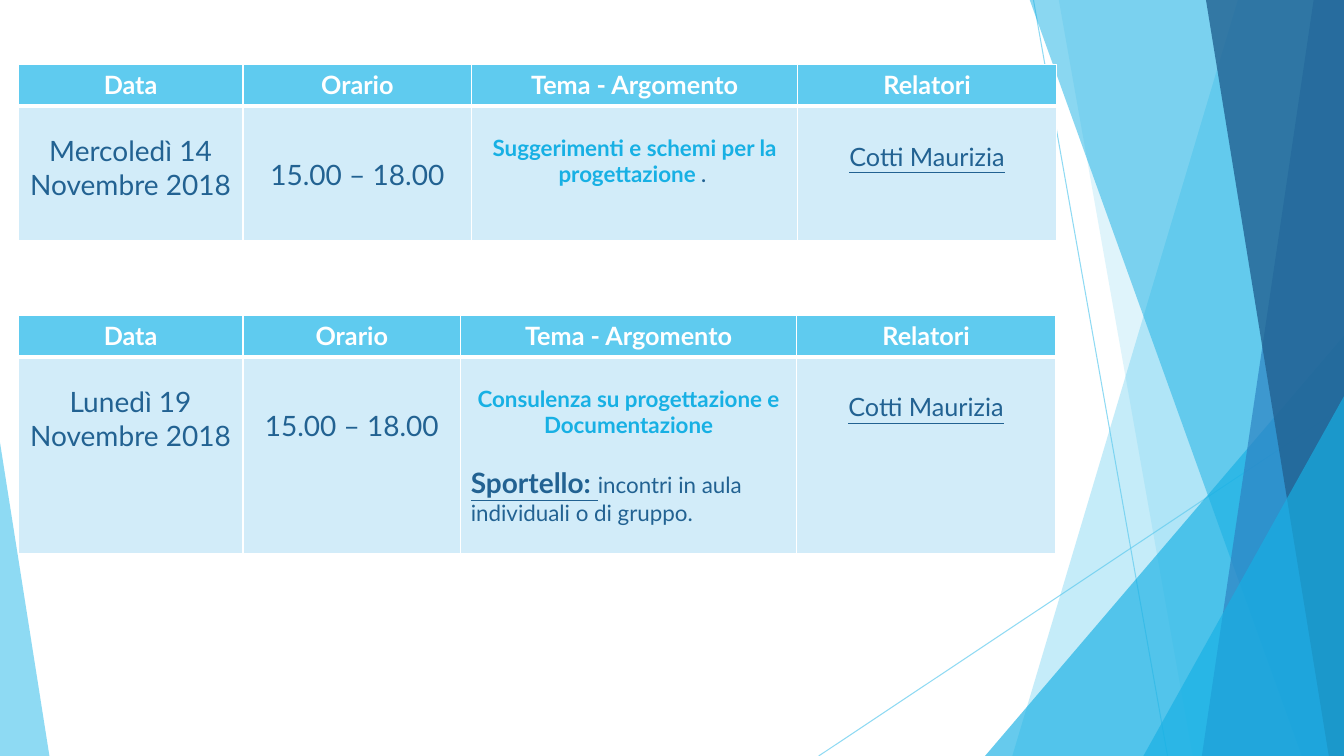
from lxml import etree
from pptx import Presentation, util as u
from pptx.dml.color import RGBColor
from pptx.enum import shapes, text
from pptx.oxml.ns import qn

WIDTH, HEIGHT, TOP = 13.33, 7.5, -0.01
SKY, AZURE, BLUE, NAVY = "5FCBEF", "17B0E4", "2E83C3", "226292"
PALE, WHITE = "D2ECF9", "FFFFFF"


def rgb(code):
    return RGBColor.from_string(code)


class Deck:
    font = "Lato"

    def __init__(self):
        self.prs = Presentation()
        self.prs.slide_width = u.Inches(WIDTH)
        self.prs.slide_height = u.Inches(HEIGHT)
        self.slide = self.prs.slides.add_slide(self.prs.slide_layouts[6])
        self.shapes = self.slide.shapes

    def fade(self, fill, percent):
        color = next(fill._xPr.iter(qn("a:srgbClr")))
        etree.SubElement(color, qn("a:alpha"), val=str(percent * 1000))

    def paint(self, facet, color, opacity):
        facet.shadow.inherit = False
        facet.fill.solid()
        facet.fill.fore_color.rgb = rgb(color)
        self.fade(facet.fill, opacity)
        facet.line.fill.background()

    def ray(self, start, end):
        points = [u.Inches(value) for value in (*start, *end)]
        ray = self.shapes.add_connector(shapes.MSO_CONNECTOR.STRAIGHT, *points)
        ray.line.width = u.Pt(0.75)
        ray.line.color.rgb = rgb(SKY)
        self.fade(ray.line.fill, 70)
        etree.SubElement(ray._element.spPr, qn("a:effectLst"))

    def band(self, top_left, bottom_left, color, opacity):
        """Facet between a slanted left edge and the right side of the slide."""
        corners = [(top_left, TOP), (WIDTH, TOP), (WIDTH, HEIGHT), (bottom_left, HEIGHT)]
        corners = [(u.Inches(x), u.Inches(y)) for x, y in corners]
        outline = self.shapes.build_freeform(*corners[0])
        outline.add_line_segments(corners[1:], close=True)
        self.paint(outline.convert_to_shape(), color, opacity)

    def wedge(self, left, top, width, apex, color, opacity):
        """Triangle standing on the bottom of the slide."""
        box = [u.Inches(value) for value in (left, top, width, HEIGHT - top)]
        wedge = self.shapes.add_shape(shapes.MSO_SHAPE.ISOSCELES_TRIANGLE, *box)
        wedge.adjustments[0] = apex
        self.paint(wedge, color, opacity)

    def borders(self, cell, widths):
        props = cell._tc.get_or_add_tcPr()
        for side, width in zip("LRTB", widths):
            line = etree.SubElement(props, qn(f"a:ln{side}"), w=str(u.Pt(width)))
            fill = etree.SubElement(line, qn("a:solidFill"))
            etree.SubElement(fill, qn("a:srgbClr"), val=WHITE)

    def cell(self, cell, paragraphs, fill, widths, margin_top=0.05):
        self.borders(cell, widths)
        cell.fill.solid()
        cell.fill.fore_color.rgb = rgb(fill)
        cell.margin_top = u.Inches(margin_top)
        for index, (layout, runs) in enumerate(paragraphs):
            frame = cell.text_frame
            paragraph = frame.add_paragraph() if index else frame.paragraphs[0]
            for name, value in layout.items():
                setattr(paragraph, name, value)
            for words, color, look in runs:
                run = paragraph.add_run()
                run.text = words
                run.font.color.rgb = rgb(color)
                for name, value in {"name": self.font, **look}.items():
                    setattr(run.font, name, value)

    def schedule(self, top, columns, heights, lesson):
        box = [u.Inches(value) for value in (0.18, top, sum(columns), sum(heights))]
        table = self.shapes.add_table(2, len(columns), *box).table
        table.first_row = table.horz_banding = False
        for column, width in zip(table.columns, columns):
            column.width = u.Inches(width)
        for row, height in zip(table.rows, heights):
            row.height = u.Inches(height)
        for index, (heading, (margin, paragraphs)) in enumerate(zip(HEADINGS, lesson)):
            self.cell(table.cell(0, index), [(CENTRED, [(heading, WHITE, HEADING)])],
                      SKY, (1, 1, 1, 3))
            self.cell(table.cell(1, index), paragraphs, PALE, (1, 1, 3, 1), margin)


# Text formats
CENTRED = {"alignment": text.PP_ALIGN.CENTER}
LEFT_SPACED = {"alignment": text.PP_ALIGN.LEFT, "space_before": u.Pt(19.2)}
HEADING = {"size": u.Pt(18), "bold": True}
LARGE = {"size": u.Pt(20), "bold": False}
TOPIC = {"size": u.Pt(16), "bold": True}
DETAIL = {"size": u.Pt(16), "bold": False}
SMALL = {"size": u.Pt(14), "bold": True}
DESK = {"size": u.Pt(20), "bold": True, "underline": True}
SPEAKER = {"size": u.Pt(18), "bold": False, "underline": True}

# Lesson contents
HEADINGS = ["Data", "Orario", "Tema - Argomento", "Relatori"]


def lesson(day, topic):
    """Top margin and paragraphs of each cell in a lesson row."""
    date = [(CENTRED, [(words, NAVY, LARGE)]) for words in (day, "Novembre 2018")]
    hours = [(CENTRED, [("15.00 – 18.00", NAVY, LARGE)])]
    speaker = [(CENTRED, [("Cotti Maurizia", NAVY, SPEAKER)])]
    return [(0.28, date), (0.52, hours), (0.28, topic), (0.35, speaker)]


suggestions = [(CENTRED, [
    ("Suggerimenti e schemi per la progettazione ", AZURE, TOPIC), (". ", NAVY, SMALL)])]
advice = [(CENTRED, [(words, AZURE, TOPIC)])
          for words in ("Consulenza su progettazione e", "Documentazione")]
advice.append((LEFT_SPACED, [
    ("Sportello: ", NAVY, DESK),
    ("incontri in aula individuali o di gruppo.", NAVY, DETAIL)]))


def main():
    deck = Deck()

    # Faceted background
    deck.ray((10.25, 0), (11.58, HEIGHT))
    deck.ray((WIDTH, 4.03), (8.12, HEIGHT))
    deck.band(12.28, 10.04, SKY, 36)
    deck.band(10.5, 11.83, SKY, 20)
    deck.wedge(9.77, 3.33, 3.56, 1, AZURE, 66)
    deck.band(10.21, 12.91, AZURE, 50)
    deck.band(13.03, 11.92, BLUE, 70)
    deck.band(11.96, 13.18, NAVY, 80)
    deck.wedge(11.34, 3.93, 1.99, 1, AZURE, 66)
    deck.wedge(0, 4.39, 0.49, 0, SKY, 70)

    # Lesson tables
    deck.schedule(0.64, [2.23, 2.27, 3.23, 2.57], [0.41, 1.34],
                  lesson("Mercoledì 14", suggestions))
    deck.schedule(3.13, [2.23, 2.16, 3.33, 2.57], [0.41, 1.95],
                  lesson("Lunedì 19", advice))

    deck.prs.save("out.pptx")


if __name__ == "__main__":
    main()
